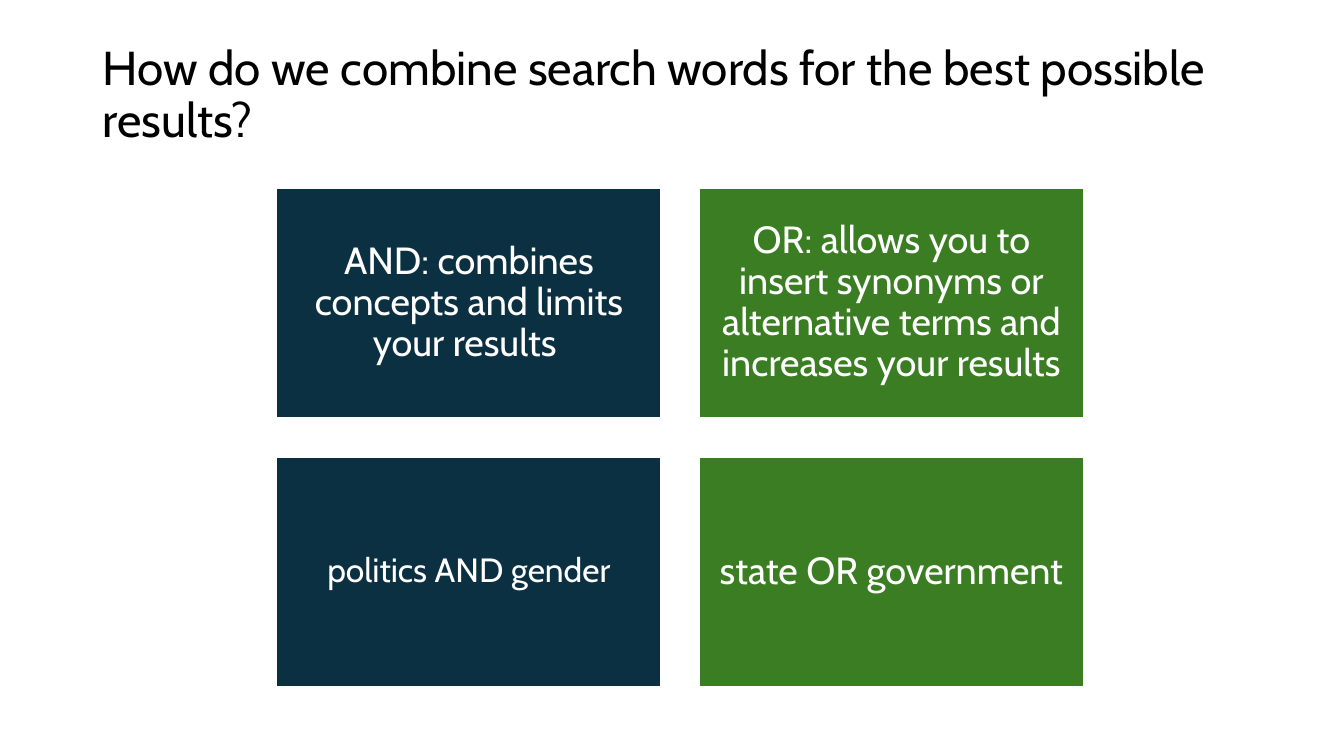
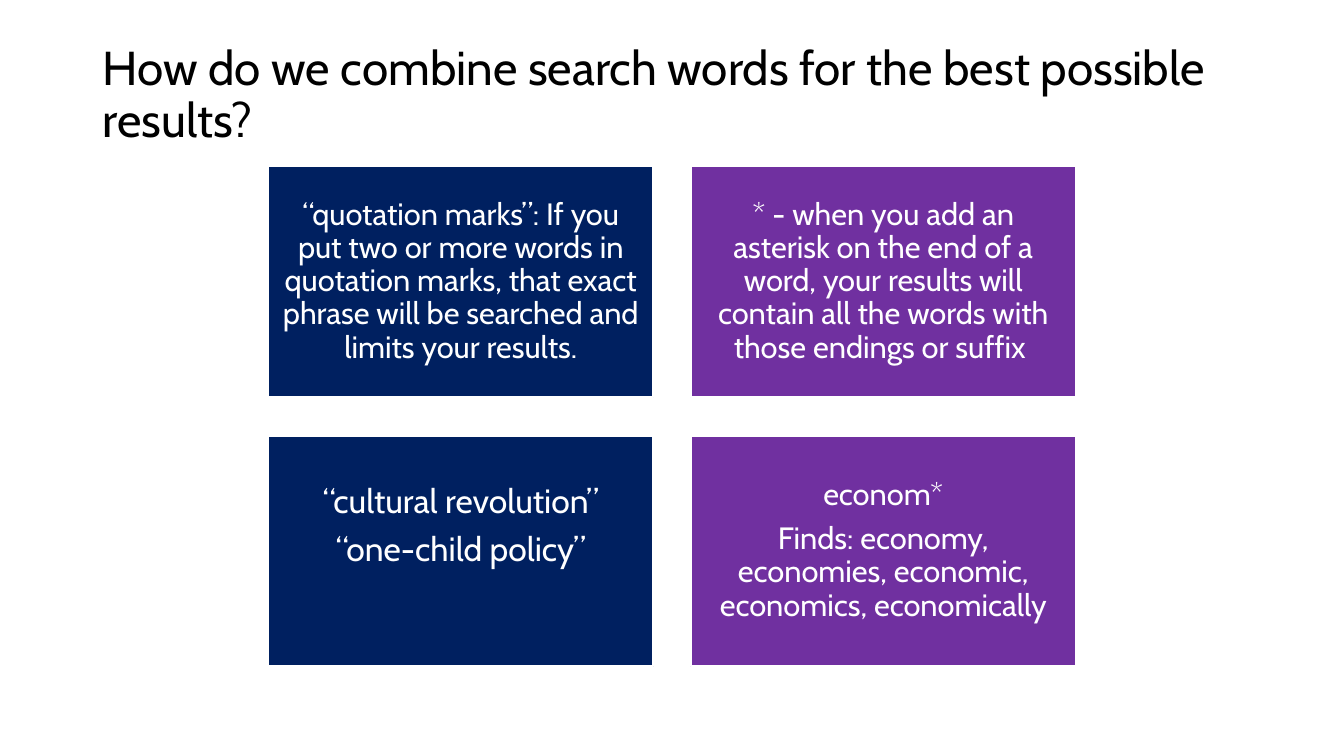
from pptx import Presentation
from pptx.dml.color import RGBColor
from pptx.enum import shapes, text
from pptx.util import Inches, Pt

FONT = "Cabin"
BLACK = RGBColor(0x00, 0x00, 0x00)
WHITE = RGBColor(0xFF, 0xFF, 0xFF)
TEAL = RGBColor(0x0B, 0x30, 0x41)
GREEN = RGBColor(0x3B, 0x7D, 0x23)
NAVY = RGBColor(0x00, 0x20, 0x60)
PURPLE = RGBColor(0x70, 0x30, 0xA0)

TITLE = "How do we combine search words for the best possible results?"
CARD_WIDTH, CARD_HEIGHT = 3.82, 2.29
COLUMN_STEP, ROW_STEP = 4.19, 2.67
CARD_INSET = 0.12


def write_text(frame, content, size, color, align, space_after=0):
    frame.word_wrap = True
    frame.vertical_anchor = text.MSO_ANCHOR.MIDDLE
    for index, line in enumerate(content.split("\n")):
        para = frame.add_paragraph() if index else frame.paragraphs[0]
        para.alignment = align
        para.line_spacing = 0.9
        para.space_after = Pt(space_after)
        span = para.add_run()
        span.text = line
        span.font.name = FONT
        span.font.size = Pt(size)
        span.font.color.rgb = color


class SearchDeck:
    def __init__(self):
        self.deck = Presentation()
        self.deck.slide_width = Inches(13.33)
        self.deck.slide_height = Inches(7.5)
        self.page = None

    def add_page(self, title):
        self.page = self.deck.slides.add_slide(self.deck.slide_layouts[6])
        box = self.page.shapes.add_textbox(
            Inches(0.92), Inches(0.36), Inches(11.49), Inches(1.19))
        write_text(box.text_frame, title, 34, BLACK, text.PP_ALIGN.LEFT)

    def add_card(self, left, top, content, size, fill, lift=0):
        card = self.page.shapes.add_shape(
            shapes.MSO_SHAPE.RECTANGLE, Inches(left), Inches(top),
            Inches(CARD_WIDTH), Inches(CARD_HEIGHT))
        card.shadow.inherit = False
        card.fill.solid()
        card.fill.fore_color.rgb = fill
        card.line.color.rgb = WHITE
        card.line.width = Pt(1.5)
        frame = card.text_frame
        frame.margin_left = frame.margin_right = Inches(CARD_INSET)
        frame.margin_top = Inches(CARD_INSET)
        frame.margin_bottom = Inches(CARD_INSET + lift)
        write_text(frame, content, size, WHITE, text.PP_ALIGN.CENTER, size * 0.35)

    def add_grid(self, left, top, fills, cards):
        for index, (content, size, lift) in enumerate(cards):
            row, column = divmod(index, len(fills))
            self.add_card(left + column * COLUMN_STEP, top + row * ROW_STEP,
                          content, size, fills[column], lift)


def main():
    search = SearchDeck()

    search.add_page(TITLE)
    search.add_grid(2.74, 1.86, (TEAL, GREEN), [
        ("AND: combines concepts and limits your results ", 27, 0),
        ("OR: allows you to insert synonyms or alternative terms and "
         "increases your results", 27, 0),
        ("politics AND gender", 24, 0),
        ("state OR government", 27, 0),
    ])

    search.add_page(TITLE)
    search.add_grid(2.66, 1.65, (NAVY, PURPLE), [
        ("“quotation marks”: If you put two or more words in quotation marks, "
         "that exact phrase will be searched and limits your results.", 22, 0),
        ("* - when you add an asterisk on the end of a word, your results will "
         "contain all the words with those endings or suffix ", 22, 0),
        ("“cultural revolution”\n“one-child policy”", 24, 0.48),
        ("econom*\nFinds: economy, economies, economic, economics, economically",
         22, 0),
    ])

    search.deck.save("out.pptx")


if __name__ == "__main__":
    main()
